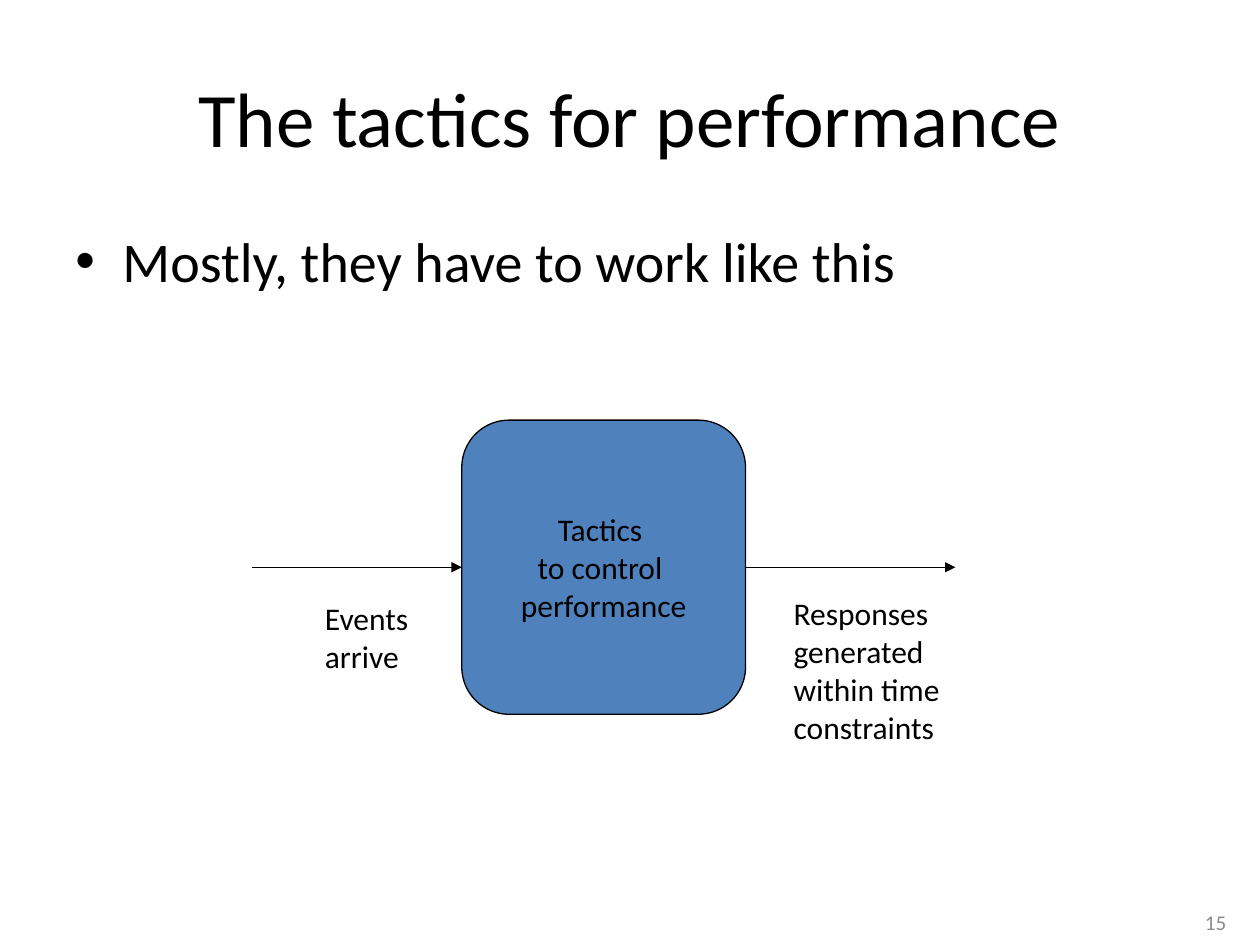
from lxml import etree
from pptx import Presentation
from pptx.dml.color import RGBColor
from pptx.enum.shapes import MSO_CONNECTOR, MSO_SHAPE
from pptx.enum.text import MSO_ANCHOR, PP_ALIGN
from pptx.oxml.ns import qn
from pptx.util import Cm, Pt

COLORS = {"text": "000000", "line": "000000", "box": "4F81BD", "number": "8C8C8C"}
FONT = "Calibri"

# Positions are left, top, width, height in centimetres.
TITLE = {"lines": ["The tactics for performance"], "at": (1.27, 0.76, 22.86, 3.18),
         "size": 44, "align": PP_ALIGN.CENTER, "anchor": MSO_ANCHOR.MIDDLE}
BULLET = {"lines": ["Mostly, they have to work like this"],
          "at": (1.27, 4.45, 22.86, 12.57), "size": 32}
TACTICS = {"lines": ["Tactics ", "to control ", "performance"],
           "at": (9.31, 8.47, 5.72, 5.93), "align": PP_ALIGN.CENTER,
           "anchor": MSO_ANCHOR.MIDDLE, "wrap": False}
LABELS = [
    {"lines": ["Events", "arrive"], "at": (6.3, 11.96, 2.46, 1.78), "wrap": False},
    {"lines": ["Responses", "generated", "within time", "constraints"],
     "at": (15.75, 11.86, 3.68, 3.3), "wrap": False},
]
PAGE_NUMBER = {"lines": ["15"], "at": (19.05, 18.08, 5.92, 1.02), "size": 12,
               "color": "number", "align": PP_ALIGN.RIGHT, "anchor": MSO_ANCHOR.MIDDLE}
ARROW_LENGTH = 4.23


def rgb(name):
    return RGBColor.from_string(COLORS[name])


def lengths(values):
    return [Cm(value) for value in values]


def write(shape, content):
    frame = shape.text_frame
    frame.text = "\n".join(content["lines"])
    frame.word_wrap = content.get("wrap", True)
    frame.vertical_anchor = content.get("anchor", MSO_ANCHOR.TOP)
    font_format = {"name": FONT, "size": Pt(content.get("size", 18))}
    for paragraph in frame.paragraphs:
        paragraph.alignment = content.get("align", PP_ALIGN.LEFT)
        for run in paragraph.runs:
            for key, value in font_format.items():
                setattr(run.font, key, value)
            run.font.color.rgb = rgb(content.get("color", "text"))


def add_text(slide, content):
    box = slide.shapes.add_textbox(*lengths(content["at"]))
    write(box, content)
    return box


def add_title(slide):
    title = slide.shapes.title
    for key, value in zip(("left", "top", "width", "height"), lengths(TITLE["at"])):
        setattr(title, key, value)
    write(title, TITLE)


def add_bullet(slide):
    paragraph = add_text(slide, BULLET).text_frame.paragraphs[0]
    paragraph.space_before = Pt(6.4)
    properties = paragraph._p.get_or_add_pPr()
    for key, value in {"marL": Cm(0.95), "indent": Cm(-0.95)}.items():
        properties.set(key, str(value))
    etree.SubElement(properties, qn("a:buFont"), typeface="Arial")
    etree.SubElement(properties, qn("a:buChar"), char="•")


def add_tactics(slide):
    box = slide.shapes.add_shape(MSO_SHAPE.ROUNDED_RECTANGLE, *lengths(TACTICS["at"]))
    box.shadow.inherit = False
    box.fill.solid()
    box.fill.fore_color.rgb = rgb("box")
    box.line.color.rgb = rgb("line")
    box.line.width = Pt(0.75)
    write(box, TACTICS)
    return box


def add_arrow(slide, start, end, y):
    arrow = slide.shapes.add_connector(MSO_CONNECTOR.STRAIGHT, start, y, end, y)
    arrow.line.color.rgb = rgb("line")
    arrow.line.width = Pt(0.75)
    etree.SubElement(arrow.line._get_or_add_ln(), qn("a:tailEnd"), type="triangle")
    etree.SubElement(arrow._element.spPr, qn("a:effectLst"))


def main():
    deck = Presentation()
    deck.slide_width, deck.slide_height = Cm(25.4), Cm(19.05)
    slide = deck.slides.add_slide(deck.slide_layouts[5])

    add_text(slide, PAGE_NUMBER)
    add_title(slide)
    add_bullet(slide)
    box = add_tactics(slide)

    right = box.left + box.width
    middle = box.top + box.height // 2
    add_arrow(slide, box.left - Cm(ARROW_LENGTH), box.left, middle)
    add_arrow(slide, right, right + Cm(ARROW_LENGTH), middle)

    for label in LABELS:
        add_text(slide, label)

    deck.save("out.pptx")


if __name__ == "__main__":
    main()
